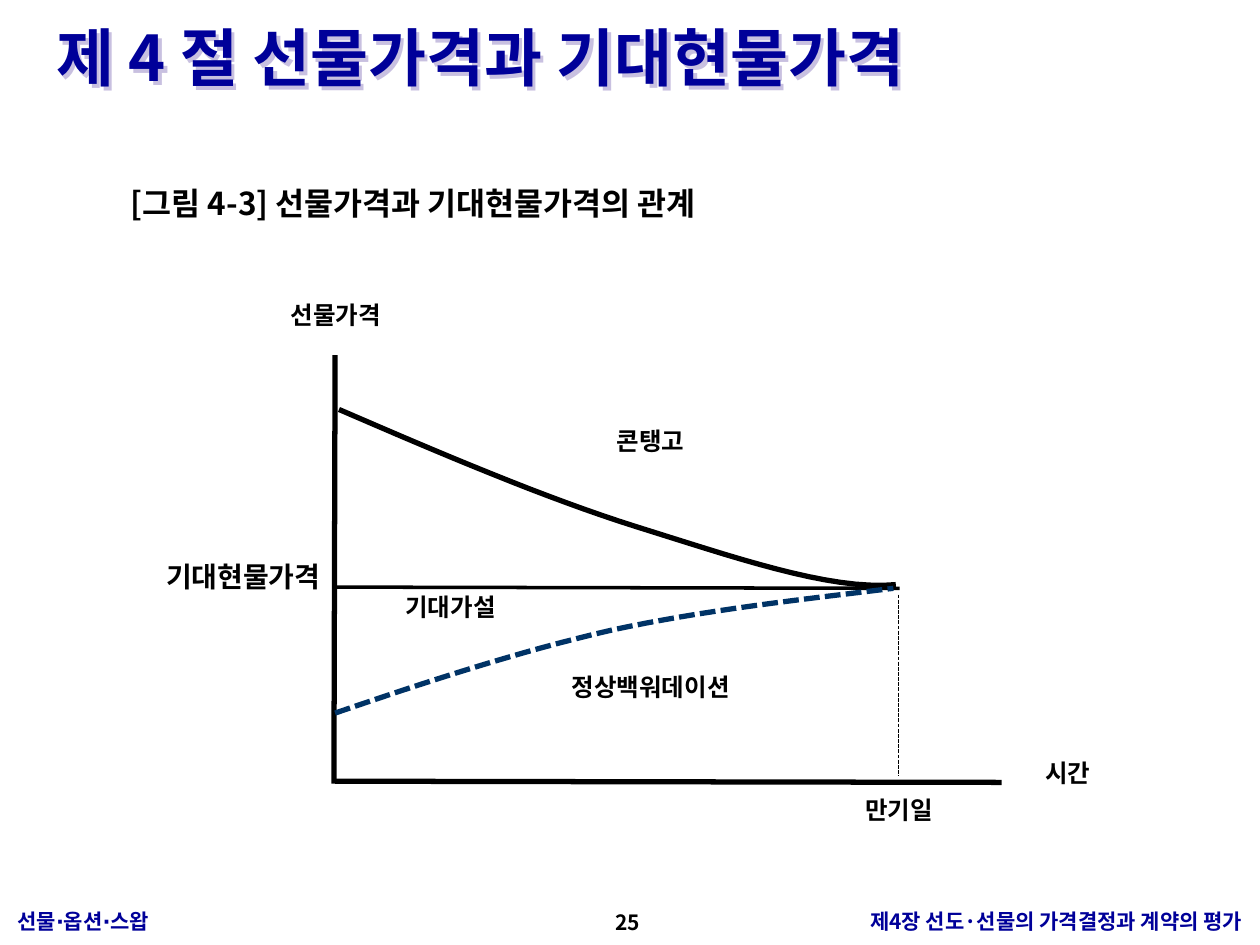
from lxml import etree
from pptx import Presentation
from pptx.dml.color import RGBColor
from pptx.enum.dml import MSO_LINE
from pptx.enum.shapes import MSO_CONNECTOR
from pptx.enum.text import MSO_AUTO_SIZE, PP_ALIGN
from pptx.oxml.ns import qn
from pptx.util import Pt

LEFT, MID, RIGHT = PP_ALIGN.LEFT, PP_ALIGN.CENTER, PP_ALIGN.RIGHT
DASH = MSO_LINE.SQUARE_DOT
STRAIGHT = MSO_CONNECTOR.STRAIGHT
GROW = MSO_AUTO_SIZE.SHAPE_TO_FIT_TEXT

THEME = {
    "font": "Noto Sans CJK KR",
    "blue": "000099", "black": "000000", "navy": "003366", "shade": "C8C0E0",
    "title": 36, "head": 18, "price": 16, "label": 14, "foot": 12,
}

TEXTS = [
    ("선물∙옵션∙스왑", 2.9, 515.5, 244, 21.6, LEFT, "foot", "blue"),
    ("제4장 선도·선물의 가격결정과 계약의 평가", 411, 515.5, 306, 21.6, RIGHT, "foot", "blue"),
    ("25", 336.2, 516.2, 45.4, 22.3, MID, "foot", "black"),
    ("제 4 절 선물가격과 기대현물가격", 25.2, 7.2, 680.4, 50.4, LEFT, "title", "blue"),
    ("[그림 4-3] 선물가격과 기대현물가격의 관계", 67.7, 90.7, 578.2, 40.3, LEFT, "head", "black"),
    ("기대현물가격", 61.2, 316.1, 128.9, 35.3, RIGHT, "price", "black"),
]
LABELS = [
    ("기대가설", 193, 334.8),
    ("정상백워데이션", 307.4, 380.2),
    ("콘탱고", 307.4, 239.8),
    ("선물가격", 127.4, 167.8),
    ("시간", 545.8, 429.8),
    ("만기일", 449.3, 450.7),
]
LABEL_W, LABEL_H = 128.9, 31.7

LINES = [
    ((191.5, 446.4), (572.4, 447.1), 3, None),
    ((191.5, 203), (190.8, 447.8), 3, None),
    ((191.5, 335.5), (514.1, 336.2), 2, None),
    ((513.4, 339.8), (513.4, 443.5), 0.75, DASH),
]
CURVES = [
    ([(193.7, 234), (252, 259.2), (311, 284.4), (363.6, 301),
      (416.9, 317.5), (473.8, 337.7), (511.9, 334.1)], "black", None),
    ([(191.5, 407.5), (244.1, 389.5), (296.6, 372.2), (349.9, 360),
      (403.2, 348.5), (457.2, 342.7), (510.5, 336.2)], "navy", DASH),
]
STEPS = 16


def tint(name):
    return RGBColor.from_string(THEME[name])


def add_text(slide, words, x, y, w, h, align, size, color):
    box = slide.shapes.add_textbox(Pt(x), Pt(y), Pt(w), Pt(h))
    frame = box.text_frame
    frame.word_wrap = True
    frame.auto_size = GROW
    para = frame.paragraphs[0]
    para.alignment = align
    if size == "head":
        para.line_spacing = 1.5
    run = para.add_run()
    run.text = words
    font = run.font
    font.name, font.size, font.bold = THEME["font"], Pt(THEME[size]), True
    font.color.rgb = tint(color)
    east = etree.SubElement(font._element, qn("a:ea"))
    east.set("typeface", THEME["font"])
    if size == "title":
        add_shade(box)


def add_shade(box):
    effect = etree.SubElement(box._element.spPr, qn("a:effectLst"))
    shade = etree.SubElement(effect, qn("a:outerShdw"), dist="35900", dir="2700000")
    etree.SubElement(shade, qn("a:srgbClr"), val=THEME["shade"])


def set_line(shape, width, color, dash):
    shape.line.width = Pt(width)
    shape.line.color.rgb = tint(color)
    if dash:
        shape.line.dash_style = dash


def add_line(slide, start, end, width, dash):
    line = slide.shapes.add_connector(STRAIGHT, *map(Pt, start + end))
    set_line(line, width, "black", dash)
    etree.SubElement(line._element.spPr, qn("a:effectLst"))


def trace(knots):
    spots = [knots[0]]
    for i in range(0, len(knots) - 1, 3):
        part = knots[i:i + 4]
        for n in range(1, STEPS + 1):
            t = n / STEPS
            u = 1 - t
            mix = (u ** 3, 3 * u * u * t, 3 * u * t * t, t ** 3)
            spots.append(tuple(sum(m * p[k] for m, p in zip(mix, part)) for k in (0, 1)))
    return [(Pt(x), Pt(y)) for x, y in spots]


def add_curve(slide, knots, color, dash):
    spots = trace(knots)
    form = slide.shapes.build_freeform(*spots[0])
    form.add_line_segments(spots[1:], close=False)
    curve = form.convert_to_shape()
    curve.fill.background()
    curve.shadow.inherit = False
    set_line(curve, 3, color, dash)


def main():
    deck = Presentation()
    deck.slide_width, deck.slide_height = Pt(720), Pt(540)
    slide = deck.slides.add_slide(deck.slide_layouts[6])
    for line in LINES:
        add_line(slide, *line)
    for curve in CURVES:
        add_curve(slide, *curve)
    for text in TEXTS:
        add_text(slide, *text)
    for words, x, y in LABELS:
        add_text(slide, words, x, y, LABEL_W, LABEL_H, MID, "label", "black")
    deck.save("out.pptx")


if __name__ == "__main__":
    main()
